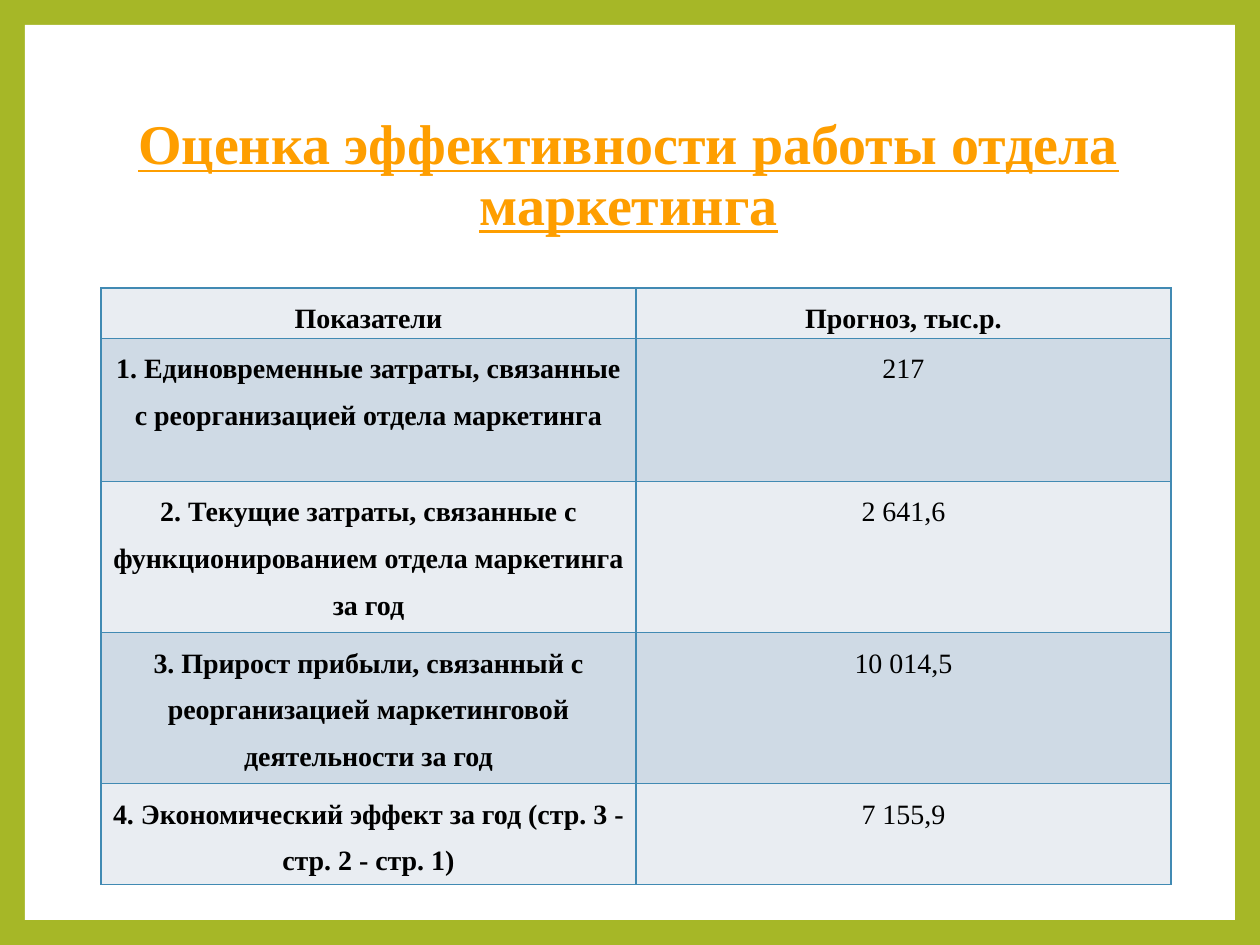
"""Builds a slide with a titled table of marketing department efficiency."""
from lxml.etree import SubElement
from pptx import Presentation
from pptx.dml.color import RGBColor
from pptx.enum.shapes import MSO_SHAPE as Shape
from pptx.enum.text import MSO_ANCHOR as Anchor, PP_ALIGN as Align
from pptx.oxml.ns import qn
from pptx.util import Emu, Pt

EMU_PER_PX = 914400 // 126
FONT = "Times New Roman"
COLORS = {
    "frame": "A6B727",
    "panel": "FFFFFF",
    "title": "FE9E00",
    "text": "000000",
    "border": "418AB3",
    "light": "E9EDF2",
    "dark": "CFDAE5",
}
TITLE = "Оценка эффективности работы отдела маркетинга"
ROWS = [
    ("Показатели", "Прогноз, тыс.р."),
    ("1. Единовременные затраты, связанные с реорганизацией отдела маркетинга", "217"),
    ("2. Текущие затраты, связанные с функционированием отдела маркетинга за год", "2 641,6"),
    ("3. Прирост прибыли, связанный с реорганизацией маркетинговой деятельности за год", "10 014,5"),
    ("4. Экономический эффект за год (стр. 3 - стр. 2 - стр. 1)", "7 155,9"),
]
ROW_HEIGHTS = [46, 143, 143, 143, 93]
COLUMN_WIDTH = 535


def px(length):
    return Emu(length * EMU_PER_PX)


def color(name):
    return RGBColor.from_string(COLORS[name])


def paint(fill, name):
    fill.solid()
    fill.fore_color.rgb = color(name)


def write(frame, text, size, name, spacing, bold=True, underline=False):
    para = frame.paragraphs[0]
    para.alignment = Align.CENTER
    para.line_spacing = spacing
    span = para.add_run()
    span.text = text
    font = span.font
    font.name, font.size = FONT, Pt(size)
    font.bold, font.underline = bold, underline
    font.color.rgb = color(name)


def add_panel(page):
    panel = page.shapes.add_shape(Shape.RECTANGLE, px(25), px(25), px(1210), px(895))
    panel.shadow.inherit = False
    paint(panel.fill, "panel")
    panel.line.fill.background()


def add_title(page):
    box = page.shapes.add_textbox(px(118), px(84), px(1021), px(186))
    frame = box.text_frame
    frame.word_wrap = True
    frame.vertical_anchor = Anchor.MIDDLE
    write(frame, TITLE, 32, "title", 0.9, underline=True)


def add_borders(cell):
    properties = cell._tc.get_or_add_tcPr()
    for index, side in enumerate(("a:lnL", "a:lnR", "a:lnT", "a:lnB")):
        line = properties.makeelement(qn(side), {"w": str(Pt(1))})
        properties.insert(index, line)
        fill = SubElement(line, qn("a:solidFill"))
        SubElement(fill, qn("a:srgbClr"), val=COLORS["border"])


def add_table(page):
    table = page.shapes.add_table(
        len(ROWS), 2, px(101), px(288), px(2 * COLUMN_WIDTH), px(sum(ROW_HEIGHTS))
    ).table
    for column in table.columns:
        column.width = px(COLUMN_WIDTH)
    for row_index, (texts, height) in enumerate(zip(ROWS, ROW_HEIGHTS)):
        table.rows[row_index].height = px(height)
        for column_index, text in enumerate(texts):
            cell = table.cell(row_index, column_index)
            cell.margin_left = cell.margin_right = px(9)
            cell.margin_top = cell.margin_bottom = 0
            paint(cell.fill, "dark" if row_index % 2 else "light")
            add_borders(cell)
            is_heading = row_index == 0 or column_index == 0
            write(cell.text_frame, text, 16, "text", 1.5, bold=is_heading)


def main():
    deck = Presentation()
    deck.slide_width, deck.slide_height = px(1260), px(945)
    page = deck.slides.add_slide(deck.slide_layouts[6])
    paint(page.background.fill, "frame")
    add_panel(page)
    add_title(page)
    add_table(page)
    deck.save("out.pptx")


if __name__ == "__main__":
    main()
